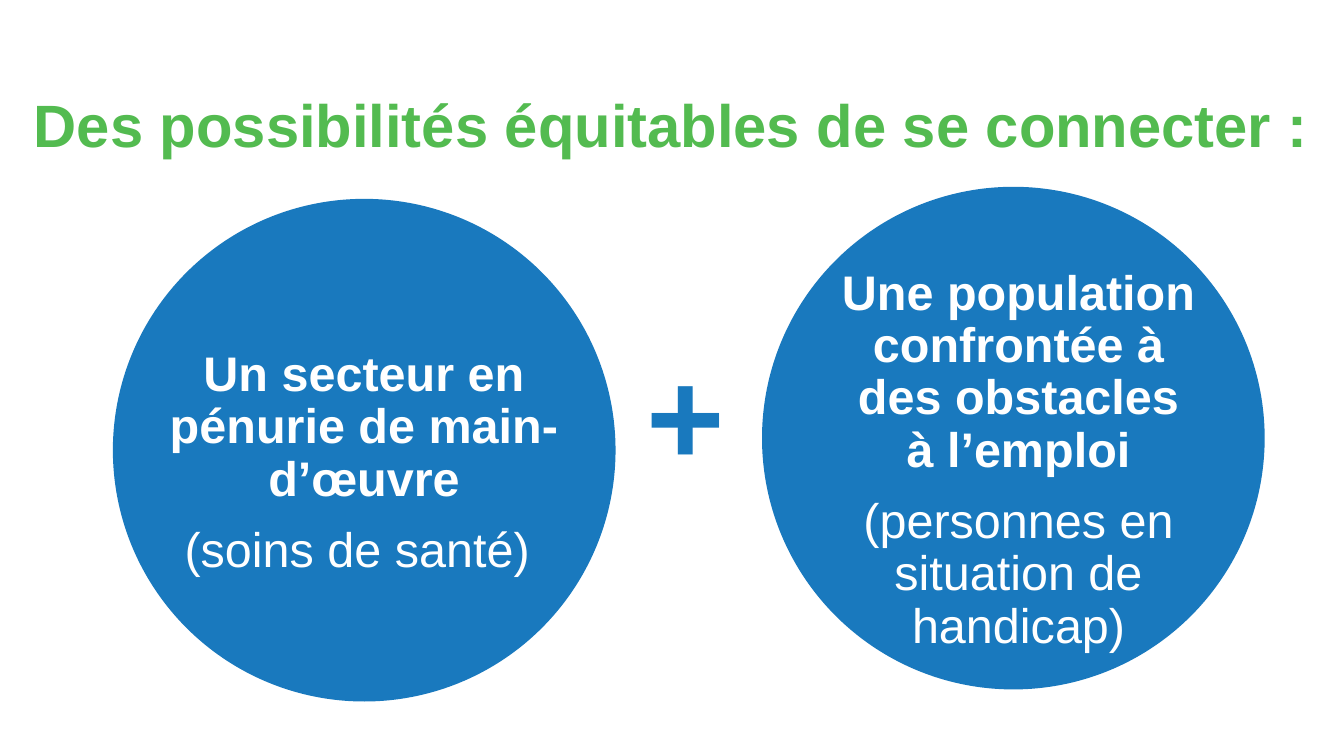
import pptx
import pptx.dml.color
import pptx.enum.shapes
import pptx.enum.text
import pptx.oxml
import pptx.util
from pptx.util import Inches

COLORS = {"green": "53BB50", "blue": "1979BE", "white": "FFFFFF"}
FONT = "Arial"
DIAMETER = 3.74
PAGE_WIDTH = 10
NO_BULLET = '<a:buNone xmlns:a="http://schemas.openxmlformats.org/drawingml/2006/main"/>'


def color(name):
    return pptx.dml.color.RGBColor.from_string(COLORS[name])


def fill_placeholder(holder, box, lines, size, color_name, inset=0.05):
    holder.left, holder.top, holder.width, holder.height = map(Inches, box)
    frame = holder.text_frame
    frame.word_wrap = True
    frame.auto_size = pptx.enum.text.MSO_AUTO_SIZE.NONE
    frame.vertical_anchor = pptx.enum.text.MSO_ANCHOR.MIDDLE
    frame.margin_left = frame.margin_right = Inches(0.1)
    frame.margin_top = frame.margin_bottom = Inches(inset)
    frame.text = "\n".join(lines)
    for number, paragraph in enumerate(frame.paragraphs):
        paragraph.alignment = pptx.enum.text.PP_ALIGN.CENTER
        paragraph.line_spacing = 0.9
        paragraph.space_before = pptx.util.Pt(10 if number else 0)
        paragraph.space_after = pptx.util.Pt(0)
        properties = paragraph._p.get_or_add_pPr()
        properties.set("marL", "0")
        properties.set("indent", "0")
        properties.append(pptx.oxml.parse_xml(NO_BULLET))
        for span in paragraph.runs:
            span.font.name = FONT
            span.font.size = pptx.util.Pt(size)
            span.font.bold = number == 0
            span.font.color.rgb = color(color_name)


def add_circle(page, left, top):
    circle = page.shapes.add_shape(
        pptx.enum.shapes.MSO_SHAPE.OVAL,
        Inches(left), Inches(top), Inches(DIAMETER), Inches(DIAMETER))
    circle.shadow.inherit = False
    circle.fill.solid()
    circle.fill.fore_color.rgb = color("blue")
    circle.line.fill.background()
    page.shapes._spTree.insert(2, circle._element)


def add_group(page, holder, left, top, text_box, lines):
    add_circle(page, left, top)
    dx, dy, width, height = text_box
    fill_placeholder(holder, (left + dx, top + dy, width, height), lines, 26, "white")


def build_slide(deck):
    page = deck.slides.add_slide(deck.slide_layouts.get_by_name("Comparison"))
    holders = {holder.placeholder_format.idx: holder for holder in page.placeholders}
    fill_placeholder(holders[0], (0, 0.43, PAGE_WIDTH, 1.05),
                     ["Des possibilités équitables de se connecter :"], 32, "green", 0.1)
    add_group(page, holders[1], 0.84, 1.48, (0.14, 0.51, 3.46, 2.92),
              ["Un secteur en pénurie de main-d’œuvre", "(soins de santé) "])
    add_group(page, holders[3], 5.67, 1.39, (0.47, 0.59, 2.88, 2.9),
              ["Une population confrontée à des obstacles à l’emploi",
               "(personnes en situation de handicap)"])
    fill_placeholder(holders[2], (4.56, 2.5, 1.08, 1.28), ["+"], 72, "blue")
    unused = holders[4]._element
    unused.getparent().remove(unused)


def main():
    deck = pptx.Presentation()
    deck.slide_width = Inches(PAGE_WIDTH)
    deck.slide_height = Inches(PAGE_WIDTH * 9 / 16)
    build_slide(deck)
    deck.save("out.pptx")


if __name__ == "__main__":
    main()
